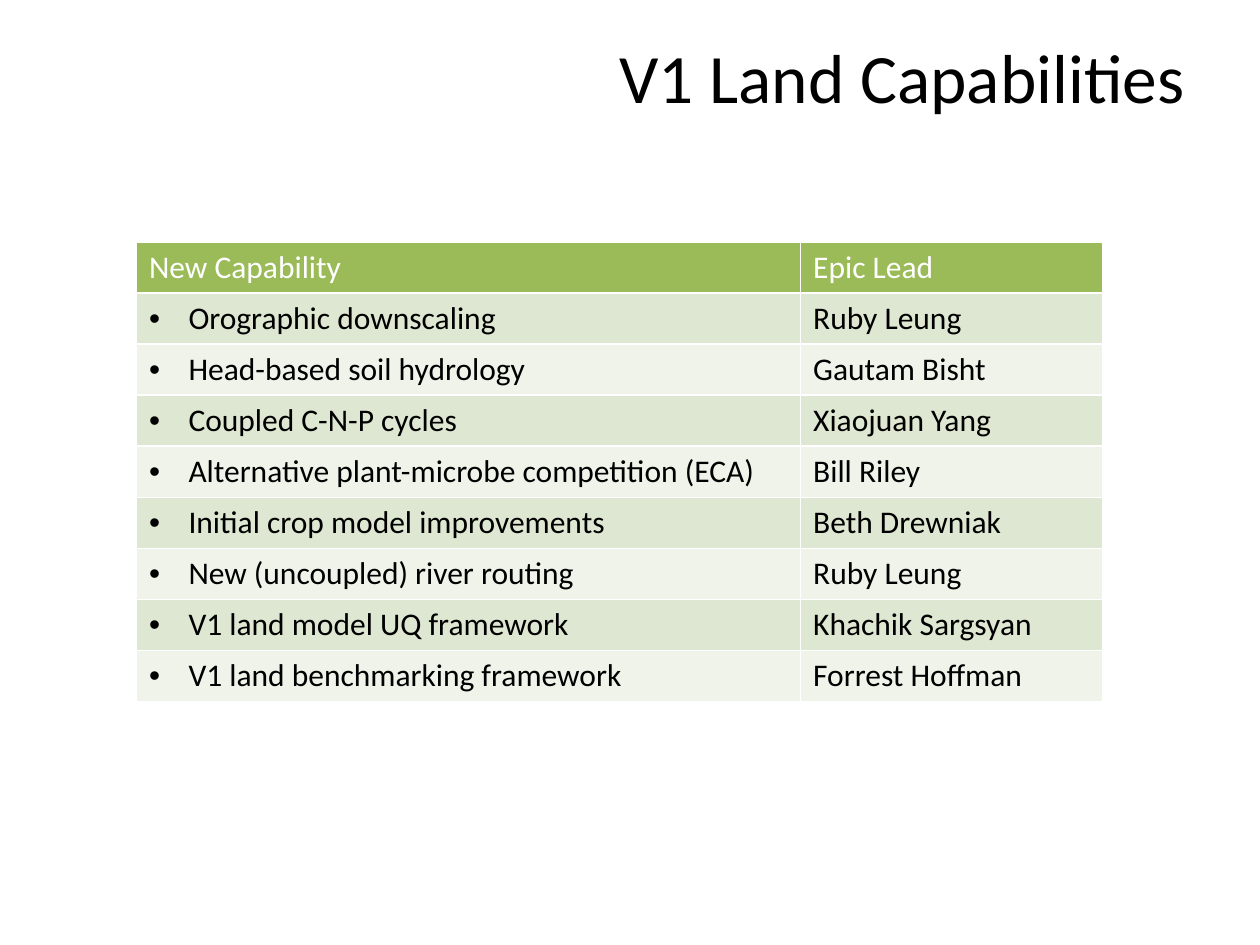
import pptx
import pptx.dml.color
import pptx.enum.text
import pptx.oxml
import pptx.oxml.ns
import pptx.util

Pt = pptx.util.Pt
ALIGN = pptx.enum.text.PP_ALIGN
ANCHOR = pptx.enum.text.MSO_ANCHOR

COLORS = {
    "text": "000000",
    "white": "FFFFFF",
    "header": "9BBB59",
    "odd": "DEE7D1",
    "even": "EFF3EA",
}
HEADINGS = ("New Capability", "Epic Lead")
CAPABILITIES = [
    ("Orographic downscaling", "Ruby Leung"),
    ("Head-based soil hydrology", "Gautam Bisht"),
    ("Coupled C-N-P cycles", "Xiaojuan Yang"),
    ("Alternative plant-microbe competition (ECA)", "Bill Riley"),
    ("Initial crop model improvements", "Beth Drewniak"),
    ("New (uncoupled) river routing", "Ruby Leung"),
    ("V1 land model UQ framework", "Khachik Sargsyan"),
    ("V1 land benchmarking framework", "Forrest Hoffman"),
]
COLUMN_WIDTHS = (379.5, 172.5)
ROW_HEIGHT = 29.2
BULLET_INDENT = 22.5


def rgb(name):
    return pptx.dml.color.RGBColor.from_string(COLORS[name])


def add_bullet(p):
    pPr = p._p.get_or_add_pPr()
    pPr.set("marL", str(Pt(BULLET_INDENT)))
    pPr.set("indent", str(-Pt(BULLET_INDENT)))
    ns = pptx.oxml.ns.nsdecls("a")
    pPr.append(pptx.oxml.parse_xml(f'<a:buFont {ns} typeface="Arial"/>'))
    pPr.append(pptx.oxml.parse_xml(f'<a:buChar {ns} char="•"/>'))


def write(tf, text, size=18, color="text", align=ALIGN.LEFT, bullet=False):
    p = tf.paragraphs[0]
    p.alignment = align
    if bullet:
        add_bullet(p)
    r = p.add_run()
    r.text = text
    r.font.name = "Calibri"
    r.font.size = Pt(size)
    r.font.bold = False
    r.font.color.rgb = rgb(color)


def add_title(s, text):
    sp = s.shapes.add_textbox(Pt(36), Pt(21.6), Pt(648), Pt(43.2))
    tf = sp.text_frame
    tf.word_wrap = True
    tf.vertical_anchor = ANCHOR.MIDDLE
    write(tf, text, size=39.6, align=ALIGN.RIGHT)


def set_borders(cell, bottom=1):
    tcPr = cell._tc.get_or_add_tcPr()
    for side, width in (("L", 1), ("R", 1), ("T", 1), ("B", bottom)):
        tcPr.append(pptx.oxml.parse_xml(
            f'<a:ln{side} {pptx.oxml.ns.nsdecls("a")} w="{Pt(width)}"><a:solidFill>'
            f'<a:srgbClr val="{COLORS["white"]}"/></a:solidFill></a:ln{side}>'))


def add_capability_table(s):
    rows = [HEADINGS] + CAPABILITIES
    table = s.shapes.add_table(
        len(rows), len(HEADINGS), Pt(78), Pt(138.2),
        Pt(sum(COLUMN_WIDTHS)), Pt(ROW_HEIGHT * len(rows))).table
    for column, width in zip(table.columns, COLUMN_WIDTHS):
        column.width = Pt(width)
    for i, row in enumerate(rows):
        table.rows[i].height = Pt(ROW_HEIGHT)
        header = i == 0
        fill = "header" if header else "odd" if i % 2 else "even"
        for j, text in enumerate(row):
            cell = table.cell(i, j)
            set_borders(cell)
            cell.fill.solid()
            cell.fill.fore_color.rgb = rgb(fill)
            write(cell.text_frame, text, color="white" if header else "text",
                  bullet=j == 0 and not header)


def main():
    prs = pptx.Presentation()
    prs.slide_width, prs.slide_height = Pt(720), Pt(540)
    s = prs.slides.add_slide(prs.slide_layouts[6])
    add_title(s, "V1 Land Capabilities")
    add_capability_table(s)
    prs.save("out.pptx")


if __name__ == "__main__":
    main()
